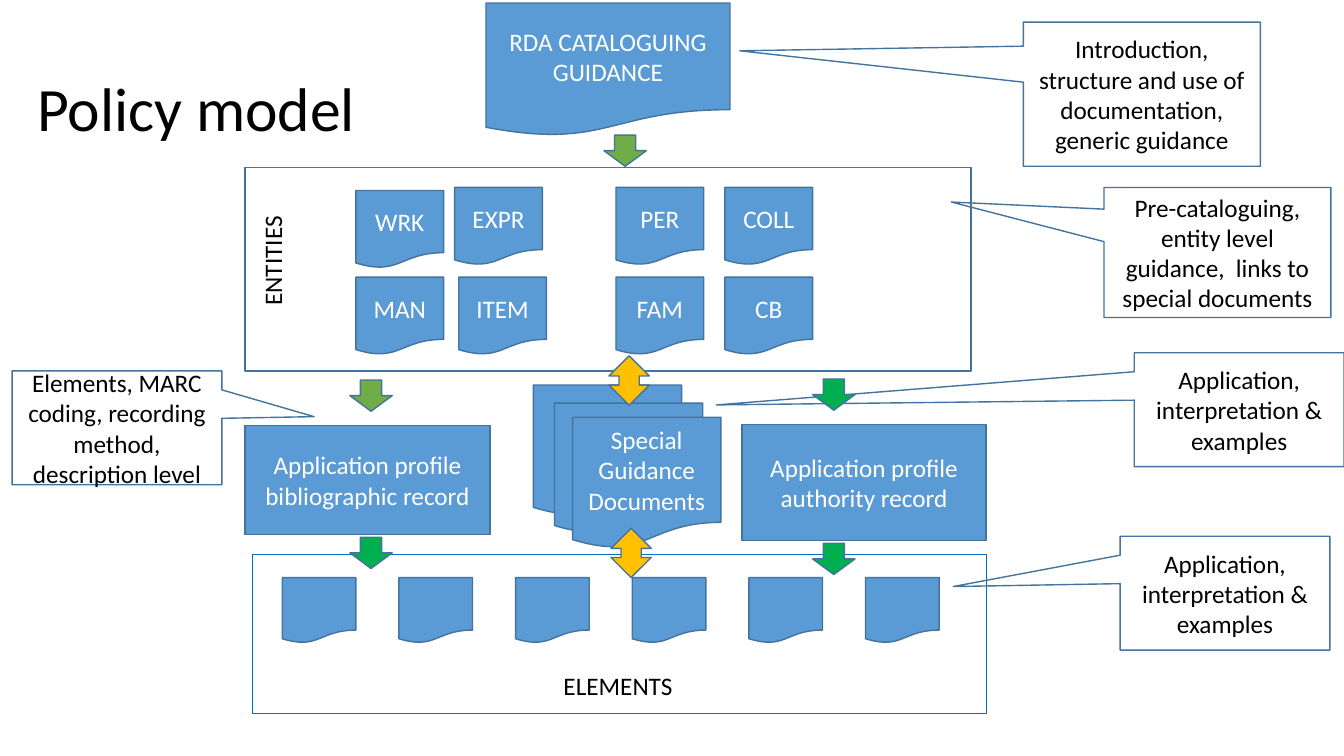
from typing import NamedTuple

from pptx import Presentation
from pptx.dml.color import RGBColor
from pptx.enum.shapes import MSO_SHAPE
from pptx.enum.text import MSO_ANCHOR, MSO_AUTO_SIZE, PP_ALIGN
from pptx.util import Inches, Pt

RECT = MSO_SHAPE.RECTANGLE
DOC = MSO_SHAPE.FLOWCHART_DOCUMENT
CALLOUT = MSO_SHAPE.RECTANGULAR_CALLOUT
DOWN = MSO_SHAPE.DOWN_ARROW
UP_DOWN = MSO_SHAPE.UP_DOWN_ARROW
CENTER = PP_ALIGN.CENTER
MIDDLE = MSO_ANCHOR.MIDDLE
GROW = MSO_AUTO_SIZE.SHAPE_TO_FIT_TEXT

BLUE, EDGE, FRAME = "5B9BD5", "43739E", "0070C0"
OLIVE, GREEN, GOLD = "70AD47", "00B050", "FFC000"
BLACK, WHITE = "000000", "FFFFFF"


class Box(NamedTuple):
    x: float
    y: float
    w: float
    h: float
    text: str = ""
    kind: MSO_SHAPE = DOC
    fill: str | None = BLUE
    line: str = EDGE
    weight: float = 1
    pointer: tuple[float, ...] = ()


class Label(NamedTuple):
    x: float
    y: float
    w: float
    h: float
    text: str
    size: int = 18
    wrap: bool = False
    vert: str = "horz"
    spacing: float | None = None


def color(value: str) -> RGBColor:
    return RGBColor.from_string(value)


def write(tf, text: str, size: int, ink: str):
    p = tf.paragraphs[0]
    r = p.add_run()
    r.text = text
    for name, value in {"name": "Calibri", "size": Pt(size)}.items():
        setattr(r.font, name, value)
    r.font.color.rgb = color(ink)
    return p


def draw_box(s, box: Box) -> None:
    sp = s.shapes.add_shape(box.kind, *map(Inches, box[:4]))
    sp.shadow.inherit = False
    if box.fill:
        sp.fill.solid()
        sp.fill.fore_color.rgb = color(box.fill)
    else:
        sp.fill.background()
    sp.line.color.rgb = color(box.line)
    sp.line.width = Pt(box.weight)
    for i, value in enumerate(box.pointer):
        sp.adjustments[i] = value
    if box.text:
        tf = sp.text_frame
        for name, value in {"word_wrap": True, "vertical_anchor": MIDDLE}.items():
            setattr(tf, name, value)
        p = write(tf, box.text, 18, WHITE if box.fill else BLACK)
        p.alignment = CENTER


def draw_label(s, label: Label) -> None:
    tf = s.shapes.add_textbox(*map(Inches, label[:4])).text_frame
    tf.word_wrap = label.wrap
    if not label.wrap:
        tf.auto_size = GROW
    tf._txBody.bodyPr.set("vert", label.vert)
    p = write(tf, label.text, label.size, BLACK)
    p.line_spacing = label.spacing


def callout(x: float, y: float, w: float, h: float, text: str,
            pointer: tuple[float, float]) -> Box:
    return Box(x, y, w, h, text, CALLOUT, None, pointer=pointer)


def arrow(x: float, y: float, fill: str) -> Box:
    return Box(x, y, 0.42, 0.31, kind=DOWN, fill=fill)


def link(x: float, y: float) -> Box:
    return Box(x, y, 0.4, 0.49, kind=UP_DOWN, fill=GOLD)


EXAMPLES = "Application, interpretation & examples"

# Callout that lies behind the diagram
special_callout = callout(11.25, 3.5, 2.08, 1.13, EXAMPLES, (-2.492, -0.042))

# Guidance and entities
guidance = Box(4.82, 0.03, 2.42, 1.32, "RDA CATALOGUING GUIDANCE")
entities = [Box(x, y, 0.87, 0.77, name) for name, x, y in (
    ("WRK", 3.53, 1.89), ("EXPR", 4.51, 1.86),
    ("MAN", 3.53, 2.75), ("ITEM", 4.55, 2.75),
    ("PER", 6.11, 1.86), ("COLL", 7.19, 1.86),
    ("FAM", 6.11, 2.75), ("CB", 7.19, 2.75),
)]
entity_frame = Box(2.43, 1.66, 7.2, 2.02, kind=RECT, fill=None)

# Application profiles
profiles = [
    Box(2.43, 4.22, 2.43, 1.08, "Application profile bibliographic record", RECT),
    Box(7.36, 4.21, 2.42, 1.15, "Application profile authority record", RECT),
]

# Elements
element_frame = Box(2.5, 5.5, 7.28, 1.58, kind=RECT, fill=None,
                    line=FRAME, weight=0.75)
elements = [Box(2.8 + 1.157 * i, 5.73, 0.73, 0.65) for i in range(6)]

# Stack of special documents
stack = [Box(x, y, 1.47, 1.3, text) for x, y, text in (
    (5.29, 3.82, ""), (5.5, 4, ""), (5.68, 4.14, "Special Guidance Documents"),
)]

# Arrows between the levels
arrows = [
    arrow(3.47, 3.77, OLIVE), arrow(8.06, 3.76, GREEN), link(6.06, 5.24),
    arrow(3.47, 5.33, GREEN), arrow(8.06, 5.39, GREEN), link(6.04, 3.53),
    arrow(5.99, 1.34, OLIVE),
]

# Callouts in front
callouts = [
    callout(10.15, 0.22, 2.35, 1.43,
            "Introduction, structure and use of documentation, generic guidance",
            (-1.697, -0.301)),
    callout(10.95, 1.86, 2.25, 1.29,
            "Pre-cataloguing, entity level guidance,  links to special documents",
            (-1.173, -0.388)),
    callout(0.12, 3.68, 2.08, 1.13,
            "Elements, MARC coding, recording method, description level",
            (0.94, -0.098)),
    callout(11.11, 5.32, 2.08, 1.13, EXAMPLES, (-1.296, -0.058)),
]

# Title and level names
labels = [
    Label(2.5, 2.04, 0.5, 1.09, "ENTITIES", vert="vert270"),
    Label(5.49, 6.6, 1.29, 0.4, "ELEMENTS"),
    Label(0.27, 0.73, 4.08, 1.39, "Policy model", 44, True, spacing=0.9),
]


def main() -> None:
    prs = Presentation()
    prs.slide_width, prs.slide_height = Inches(13.33), Inches(7.5)
    s = prs.slides.add_slide(prs.slide_layouts[6])
    for box in (special_callout, guidance, *entities, entity_frame, *profiles,
                element_frame, *elements, *stack, *arrows, *callouts):
        draw_box(s, box)
    for label in labels:
        draw_label(s, label)
    prs.save("out.pptx")


if __name__ == "__main__":
    main()
